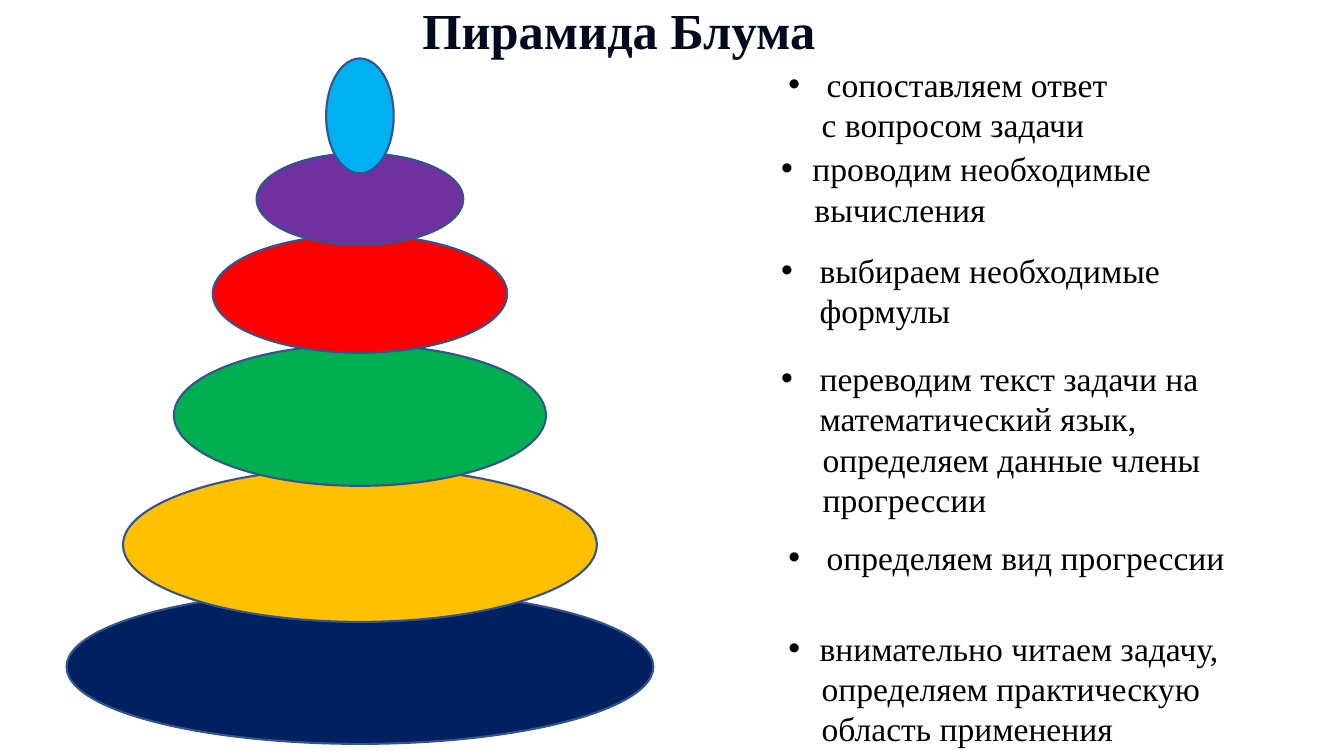
from lxml.etree import SubElement as Sub
from pptx import Presentation
from pptx.dml.color import RGBColor as RGB
from pptx.enum.shapes import MSO_SHAPE as Shape
from pptx.enum.text import MSO_ANCHOR as Anchor, MSO_AUTO_SIZE as Auto, PP_ALIGN as Align
from pptx.oxml.ns import qn
from pptx.util import Inches, Pt

NAVY = RGB(0x00, 0x20, 0x60)
GOLD = RGB(0xFF, 0xC0, 0x00)
GREEN = RGB(0x00, 0xB0, 0x50)
RED = RGB(0xFF, 0x00, 0x00)
PURPLE = RGB(0x70, 0x30, 0xA0)
SKY = RGB(0x00, 0xB0, 0xF0)
EDGE = RGB(0x32, 0x54, 0x91)
BLACK = RGB(0x00, 0x00, 0x00)
INK = RGB(0x00, 0x0A, 0x1E)

AXIS = 3.57
RINGS = [
    (5.85, 5.82, 1.53, NAVY),
    (4.64, 4.7, 1.53, GOLD),
    (3.42, 3.69, 1.4, GREEN),
    (2.33, 2.92, 1.17, RED),
    (1.52, 2.05, 0.91, PURPLE),
    (0.58, 0.67, 1.14, SKY),
]

TOP, MID = Anchor.TOP, Anchor.MIDDLE
LABELS = [
    ((7.72, 6.17, 5.48, 1.31), 0.31, 0.33, MID, True, 1.0,
     ["внимательно читаем задачу,", "определяем практическую", "область применения"]),
    ((7.72, 5.25, 4.57, 0.51), 0.38, 0.38, TOP, False, 1.07,
     ["определяем вид прогрессии"]),
    ((7.65, 3.49, 5.48, 1.72), 0.38, 0.41, MID, True, 1.0,
     ["переводим текст задачи на математический язык,",
      "определяем данные члены", "прогрессии"]),
    ((7.65, 2.43, 4.26, 0.91), 0.38, 0.38, TOP, True, 1.0,
     ["выбираем необходимые формулы"]),
    ((7.65, 1.42, 4, 0.91), 0.31, 0.33, TOP, False, 1.0,
     ["проводим необходимые", "вычисления"]),
    ((7.72, 0.58, 3.48, 0.91), 0.38, 0.33, TOP, False, 1.0,
     ["сопоставляем ответ", "с вопросом задачи"]),
]


class Deck:
    face = "Times New Roman"
    head = {"size": Pt(36), "bold": True}
    body = {"size": Pt(24), "bold": False}

    def __init__(self):
        self.prs = Presentation()
        self.prs.slide_width = Inches(13.33)
        self.prs.slide_height = Inches(7.5)
        self.slide = self.prs.slides.add_slide(self.prs.slide_layouts[5])

    def apply(self, item, style):
        for key, value in style.items():
            setattr(item, key, value)

    def words(self, para, text, style, color):
        run = para.add_run()
        run.text = text
        self.apply(run.font, {"name": self.face, **style})
        run.font.color.rgb = color

    def title(self, text, at):
        box = self.slide.shapes.title
        place = zip(("left", "top", "width", "height"), map(Inches, at))
        self.apply(box, dict(place))
        frame = box.text_frame
        self.apply(frame, {"word_wrap": False, "auto_size": Auto.NONE,
                           "vertical_anchor": TOP})
        para = frame.paragraphs[0]
        para.alignment = Align.LEFT
        self.words(para, text, self.head, INK)

    def ring(self, top, width, height, color):
        oval = self.slide.shapes.add_shape(
            Shape.OVAL, Inches(AXIS - width / 2), Inches(top),
            Inches(width), Inches(height))
        oval.shadow.inherit = False
        oval.fill.solid()
        oval.fill.fore_color.rgb = color
        oval.line.color.rgb = EDGE
        oval.line.width = Pt(1.5)

    def indent(self, para, left, mark):
        props = para._p.get_or_add_pPr()
        props.set("marL", str(Inches(left)))
        props.set("indent", str(-Inches(left) if mark else 0))
        if mark:
            Sub(props, qn("a:buFont")).set("typeface", "Arial")
            Sub(props, qn("a:buChar")).set("char", "•")

    def label(self, at, hang, inset, anchor, wrap, space, lines):
        frame = self.slide.shapes.add_textbox(*map(Inches, at)).text_frame
        self.apply(frame, {"word_wrap": wrap, "vertical_anchor": anchor,
                           "auto_size": Auto.SHAPE_TO_FIT_TEXT})
        for row, text in enumerate(lines):
            para = frame.add_paragraph() if row else frame.paragraphs[0]
            self.indent(para, inset if row else hang, row == 0)
            para.line_spacing = space
            self.words(para, text, self.body, BLACK)


def main():
    deck = Deck()
    deck.title("Пирамида Блума", (4.09, -0.06, 4.14, 0.71))
    for ring, label in zip(RINGS, LABELS):
        deck.ring(*ring)
        deck.label(*label)
    deck.prs.save("out.pptx")


if __name__ == "__main__":
    main()
